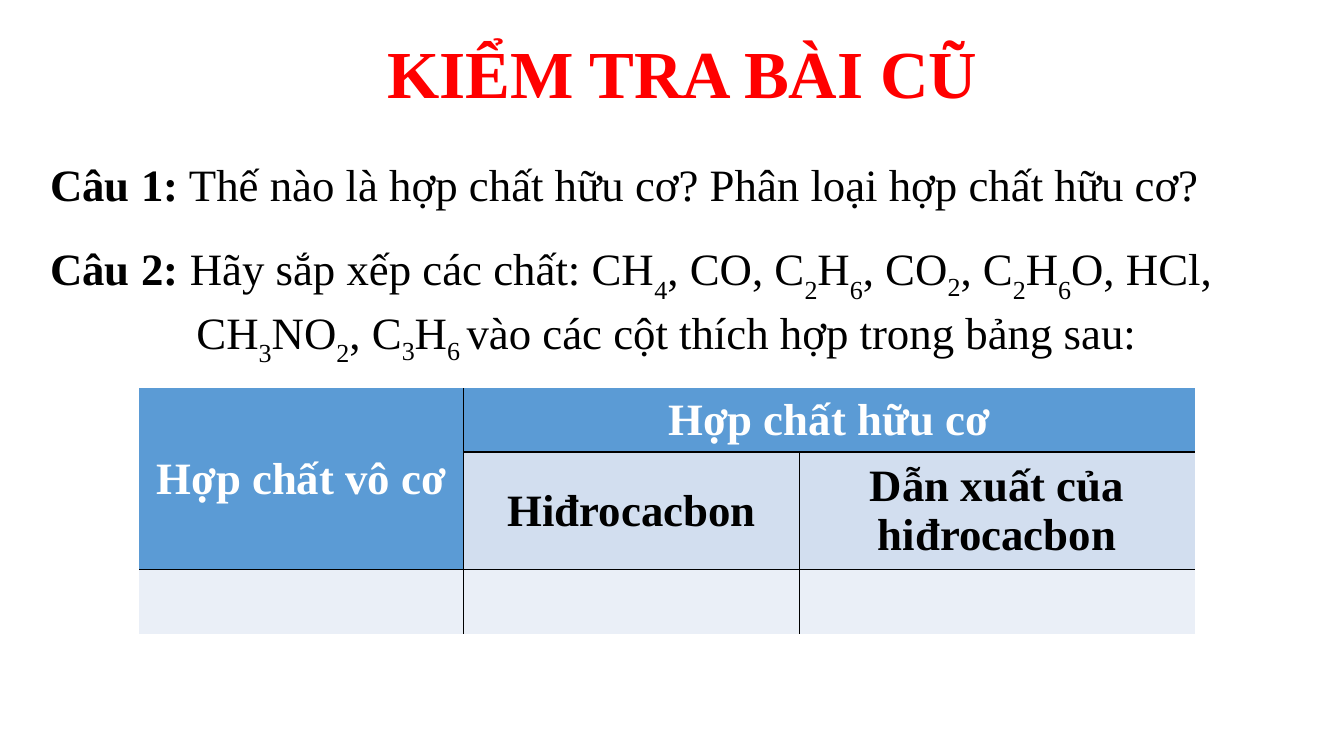
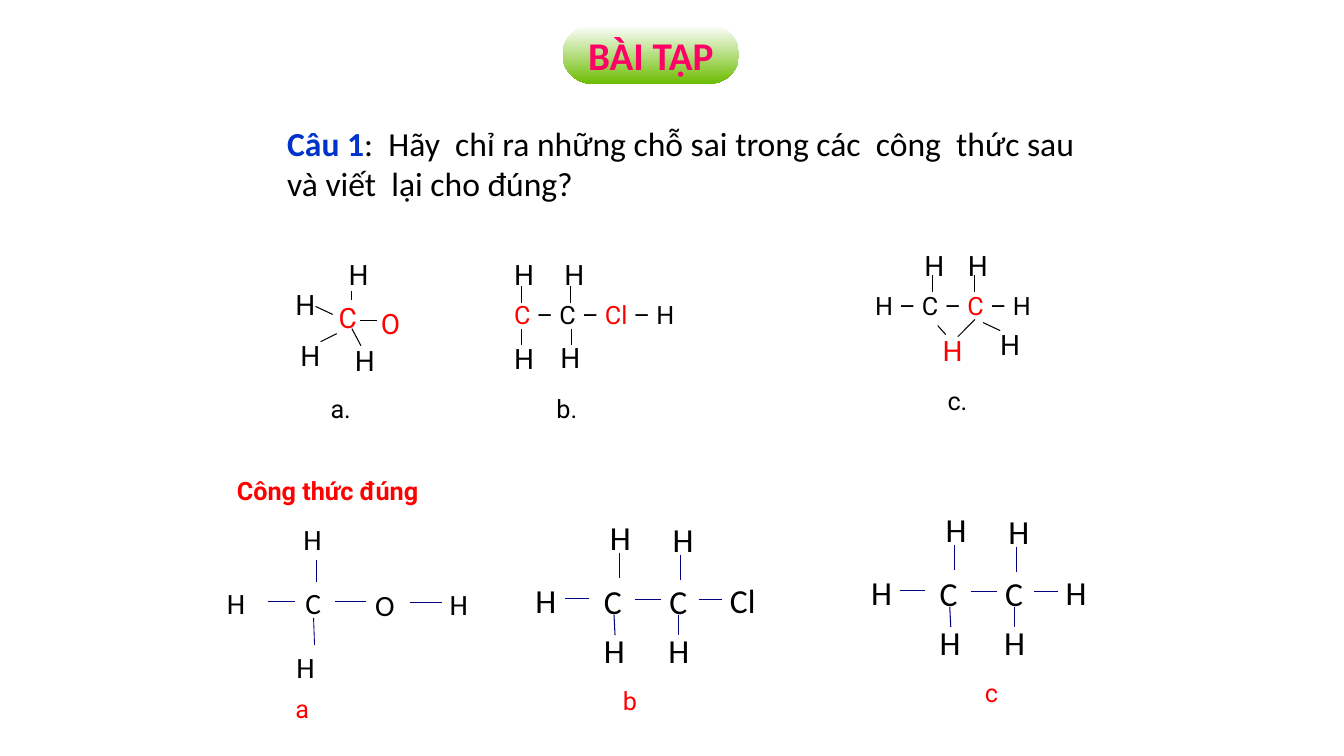
"""Build two chemistry lesson slides: a review table and a structural formula exercise."""
from pptx import Presentation
from pptx.dml.color import RGBColor
from pptx.enum.shapes import MSO_CONNECTOR, MSO_SHAPE
from pptx.enum.text import MSO_ANCHOR, PP_ALIGN
from pptx.oxml.ns import qn
from pptx.util import Pt
from lxml.etree import SubElement

PX = 9144
BLACK = RGBColor(0x00, 0x00, 0x00)
WHITE = RGBColor(0xFF, 0xFF, 0xFF)
RED = RGBColor(0xFF, 0x00, 0x00)
PINK = RGBColor(0xFF, 0x00, 0x66)
BLUE = RGBColor(0x00, 0x33, 0xCC)
NAVY = RGBColor(0x00, 0x00, 0x80)
GREEN = RGBColor(0x6D, 0xBD, 0x03)
HEADER_BLUE = RGBColor(0x5B, 0x9B, 0xD5)
BAND_DARK = RGBColor(0xD2, 0xDE, 0xEF)
BAND_LIGHT = RGBColor(0xEA, 0xEF, 0xF7)
SERIF = "Times New Roman"
SANS = "Calibri"
ROBOTO = "Roboto"


def write(frame, spans, font, size, align=PP_ALIGN.LEFT):
    """Fill the first paragraph with spans of (text, colour, bold, baseline)."""
    para = frame.paragraphs[0]
    para.alignment = align
    for text, color, bold, baseline in spans:
        span = para.add_run()
        span.text = text
        span.font.name = font
        span.font.size = Pt(size)
        span.font.bold = bold
        span.font.color.rgb = color
        if baseline:
            span.font._element.set("baseline", str(baseline * 1000))
    return para


def add_text(page, bounds, spans, font, size, align=PP_ALIGN.LEFT, inset=True):
    """Add a wrapped text box and return its paragraph."""
    box = page.shapes.add_textbox(*(value * PX for value in bounds))
    frame = box.text_frame
    frame.word_wrap = True
    if not inset:
        frame.margin_left = frame.margin_right = 0
        frame.margin_top = frame.margin_bottom = 0
    return write(frame, spans, font, size, align)


deck = Presentation()
deck.slide_width = 1333 * PX
deck.slide_height = 750 * PX
blank = deck.slide_layouts[6]

review = deck.slides.add_slide(blank)
add_text(review, (276, 26, 802, 91), [("KIỂM TRA BÀI CŨ", RED, True, 0)],
         SERIF, 48, PP_ALIGN.CENTER)
first_question = add_text(review, (40, 147, 1276, 68), [
    ("Câu 1:", BLACK, True, 0),
    (" Thế nào là hợp chất hữu cơ? Phân loại hợp chất hữu cơ?", BLACK, False, 0),
], SERIF, 32)
first_question.line_spacing = 1.07

substances = [
    (" Hãy sắp xếp các chất: CH", 0), ("4", -30), (", CO, C", 0), ("2", -30),
    ("H", 0), ("6", -30), (", CO", 0), ("2", -25), (", C", 0), ("2", -30),
    ("H", 0), ("6", -30), ("O, HCl, CH", 0), ("3", -30), ("NO", 0), ("2", -30),
    (", C", 0), ("3", -25), ("H", 0), ("6 ", -25),
    ("vào các cột thích hợp trong bảng sau:", 0),
]
second_question = add_text(
    review, (40, 234, 1276, 134),
    [("Câu 2:", BLACK, True, 0)]
    + [(text, BLACK, False, baseline) for text, baseline in substances],
    SERIF, 32)
hanging = second_question._p.get_or_add_pPr()
hanging.set("marL", str(145 * PX))
hanging.set("indent", str(-145 * PX))

column_widths = [322, 333, 392]
row_heights = [63, 117, 64]
table = review.shapes.add_table(
    3, 3, 138 * PX, 385 * PX, sum(column_widths) * PX, sum(row_heights) * PX).table
for column, width in zip(table.columns, column_widths):
    column.width = width * PX
for row, height in zip(table.rows, row_heights):
    row.height = height * PX
table.cell(0, 0).merge(table.cell(1, 0))
table.cell(0, 1).merge(table.cell(0, 2))
cells = [
    (0, 0, "Hợp chất vô cơ", HEADER_BLUE, WHITE),
    (0, 1, "Hợp chất hữu cơ", HEADER_BLUE, WHITE),
    (1, 1, "Hiđrocacbon", BAND_DARK, BLACK),
    (1, 2, "Dẫn xuất của hiđrocacbon", BAND_DARK, BLACK),
    (2, 0, "", BAND_LIGHT, BLACK),
    (2, 1, "", BAND_LIGHT, BLACK),
    (2, 2, "", BAND_LIGHT, BLACK),
]
for row, column, text, fill, color in cells:
    cell = table.cell(row, column)
    properties = cell._tc.get_or_add_tcPr()
    inner_sides = {
        "a:lnL": column > 0,
        "a:lnR": column + cell.span_width < 3 if cell.is_merge_origin else column < 2,
        "a:lnT": row > 0,
        "a:lnB": row + cell.span_height < 3 if cell.is_merge_origin else row < 2,
    }
    for side, inner in inner_sides.items():
        border = SubElement(properties, qn(side), w="12700" if inner else "0")
        if inner:
            paint = SubElement(border, qn("a:solidFill"))
            SubElement(paint, qn("a:srgbClr"), val=str(BLACK))
        else:
            SubElement(border, qn("a:noFill"))
    cell.fill.solid()
    cell.fill.fore_color.rgb = fill
    cell.vertical_anchor = MSO_ANCHOR.MIDDLE
    if text:
        write(cell.text_frame, [(text, color, True, 0)], SERIF, 32, PP_ALIGN.CENTER)

exercise = deck.slides.add_slide(blank)
pill = exercise.shapes.add_shape(
    MSO_SHAPE.ROUNDED_RECTANGLE, 558 * PX, 25 * PX, 175 * PX, 58 * PX)
pill.adjustments[0] = 0.5
pill.shadow.inherit = False
pill.line.fill.background()
pill.fill.gradient()
pill.fill.gradient_angle = 270
for stop, position, color in zip(pill.fill.gradient_stops, (0, 1), (WHITE, GREEN)):
    stop.position = position
    stop.color.rgb = color
pill.text_frame.word_wrap = False
pill.text_frame.vertical_anchor = MSO_ANCHOR.MIDDLE
write(pill.text_frame, [("BÀI TẬP", PINK, True, 0)], SANS, 28, PP_ALIGN.CENTER)
add_text(exercise, (275, 117, 833, 91), [
    ("Câu 1", BLUE, True, 0),
    (":  Hãy  chỉ ra những chỗ sai trong các  công  thức sau và viết  lại cho đúng?",
     BLACK, False, 0),
], SANS, 24)

wrong_atoms = [
    (326, 293, "C", RED), (283, 280, "H", BLACK), (288, 331, "H", BLACK),
    (342, 336, "H", BLACK), (336, 251, "H", BLACK), (368, 299, "O", RED),
    (546, 333, "H", BLACK), (500, 334, "H", BLACK), (500, 251, "H", BLACK),
    (550, 251, "H", BLACK), (925, 326, "H", RED), (950, 242, "H", BLACK),
    (907, 242, "H", BLACK), (982, 320, "H", BLACK),
]
for left, top, atom, color in wrong_atoms:
    add_text(exercise, (left, top, 42, 43), [(atom, color, False, 0)], ROBOTO, 20)

wrong_chains = [
    (500, 292, [("C", RED), (" – C – ", BLACK), ("Cl", RED), (" – H", BLACK)]),
    (858, 283, [("H – C – ", BLACK), ("C", RED), (" – H", BLACK)]),
]
for left, top, chain in wrong_chains:
    add_text(exercise, (left, top, 208, 40),
             [(text, color, False, 0) for text, color in chain], ROBOTO, 18)

captions = [
    (318, 385, 42, "a.", BLACK, False), (542, 385, 50, "b.", BLACK, False),
    (930, 377, 50, "c.", BLACK, False),
    (225, 467, 292, "Công thức đúng", RED, True),
    (283, 683, 75, "a", RED, False), (608, 675, 50, "b", RED, False),
    (967, 667, 50, "c", RED, False),
]
for left, top, width, text, color, bold in captions:
    add_text(exercise, (left, top, width, 40), [(text, color, bold, 0)], ROBOTO, 18)

wrong_bonds = [
    (357, 318, 374, 318), (313, 304, 330, 312), (349, 289, 349, 298),
    (334, 331, 318, 339), (349, 326, 358, 343),
    (567, 326, 567, 342), (517, 326, 517, 342),
    (517, 284, 517, 301), (566, 284, 566, 301),
    (925, 273, 925, 290), (967, 273, 967, 290), (930, 323, 938, 332),
    (967, 317, 950, 334), (975, 320, 992, 328),
]
methanol_bonds = [
    (266, 597, 293, 597), (314, 556, 314, 577), (311, 613, 312, 640),
    (332, 597, 363, 597), (407, 598, 438, 598),
]
methanol_atoms = [
    (294, 644, "H"), (372, 582, "O"), (446, 581, "H"),
    (225, 580, "H"), (301, 517, "H"), (303, 580, "C"),
]
for left, top, atom in methanol_atoms:
    add_text(exercise, (left, top, 25, 35), [(atom, BLACK, False, 0)],
             SANS, 21, inset=False)

ethane_atoms = [
    (599, 625, "H"), (663, 625, "H"), (599, 576, "C"), (664, 576, "C"),
    (605, 513, "H"), (667, 515, "H"), (531, 575, "H"),
]
ethane_bonds = [
    (630, 595, 656, 595), (560, 594, 584, 594), (614, 549, 614, 573),
    (693, 595, 716, 595), (609, 610, 610, 630), (675, 551, 675, 575),
    (673, 610, 673, 630),
]
right_bonds = []
for across, down, last_atom in [(0, 0, "Cl"), (333, -8, "H")]:
    for left, top, atom in ethane_atoms + [(724, 575, last_atom)]:
        add_text(exercise, (left + across, top + down, 31, 40),
                 [(atom, BLACK, False, 0)], SANS, 24, inset=False)
    for x1, y1, x2, y2 in ethane_bonds:
        right_bonds.append((x1 + across, y1 + down, x2 + across, y2 + down))

for bonds, color, width in [(wrong_bonds, BLACK, 0.75), (methanol_bonds, NAVY, 0.63),
                            (right_bonds, NAVY, 0.75)]:
    for ends in bonds:
        bond = exercise.shapes.add_connector(
            MSO_CONNECTOR.STRAIGHT, *(value * PX for value in ends))
        bond.line.color.rgb = color
        bond.line.width = Pt(width)
        SubElement(bond._element.spPr, qn("a:effectLst"))

deck.save("out.pptx")
